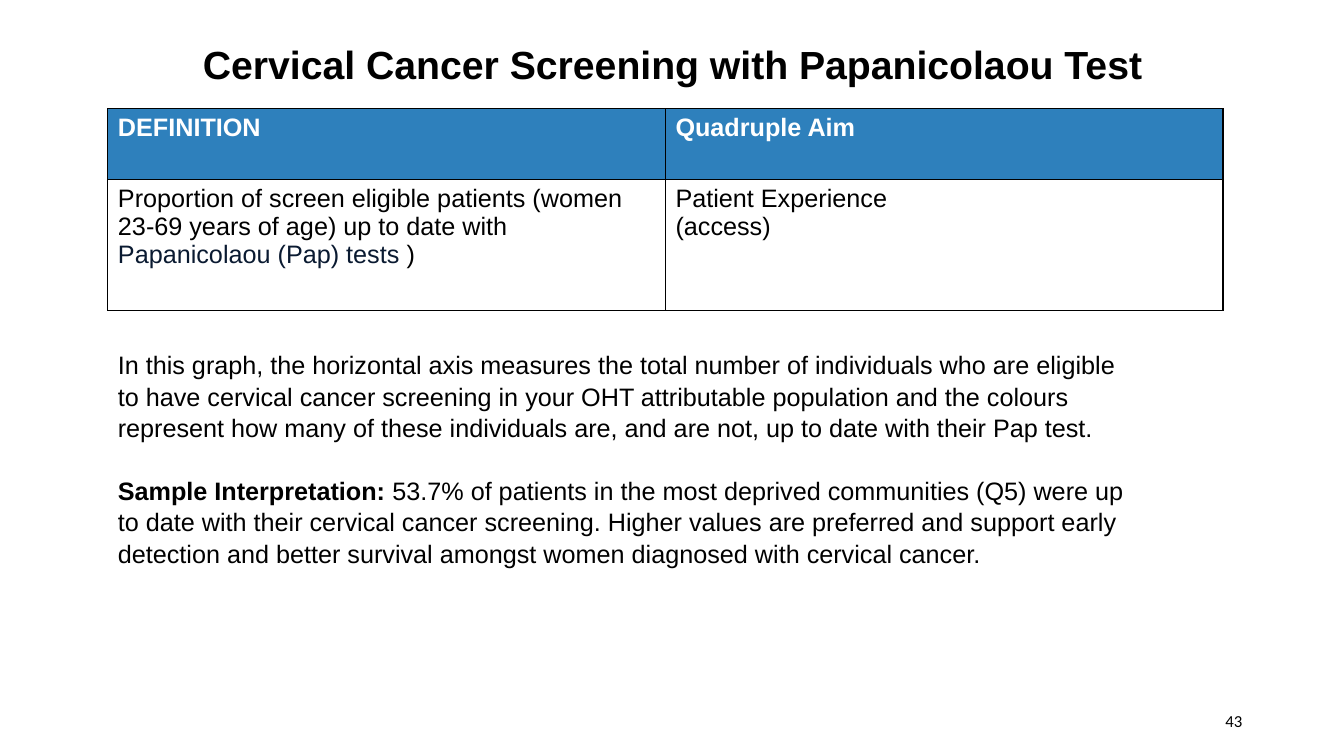
from lxml.etree import SubElement as Sub
from pptx import Presentation
from pptx.dml.color import RGBColor
from pptx.enum.text import MSO_ANCHOR as Anchor, MSO_AUTO_SIZE as Size, PP_ALIGN as Align
from pptx.oxml.ns import qn
from pptx.util import Pt

PX = 9144  # 100 px to the inch
BLACK, WHITE, BLUE, NAVY = "000000", "FFFFFF", "2E80BC", "0A1A31"

HEAD = ["DEFINITION", "Quadruple Aim"]
AIM = ["Patient Experience", "(access)"]
PROP = [
    ("Proportion of screen eligible patients (women 23-69 years of age) up to date with ",
     BLACK, False),
    ("Papanicolaou (Pap) tests ", NAVY, False),
    (")", BLACK, False),
]
GRAPH = [
    ("In this graph, the horizontal axis measures the total number of individuals who are "
     "eligible to have cervical cancer screening in your OHT attributable population and the "
     "colours represent how many of these individuals are, and are not, up to date with "
     "their Pap test.", BLACK, False),
]
SAMPLE = [
    ("Sample Interpretation: ", BLACK, True),
    ("53.7% of patients in the most deprived communities (Q5) were up to date with their "
     "cervical cancer screening. Higher values are preferred and support early detection and "
     "better survival amongst women diagnosed with cervical cancer.", BLACK, False),
]


def color(code):
    return RGBColor.from_string(code)


def style(run, size, tint=BLACK, bold=False, face="Arial"):
    font = run.font
    font.name, font.size, font.bold = face, Pt(size), bold
    font.color.rgb = color(tint)


def write(frame, paras, size=18):
    """Fill a text frame with paragraphs, each a list of (text, colour, bold)."""
    for i, parts in enumerate(paras):
        para = frame.add_paragraph() if i else frame.paragraphs[0]
        for text, tint, bold in parts:
            run = para.add_run()
            run.text = text
            style(run, size, tint, bold)


def border(cell):
    props = cell._tc.get_or_add_tcPr()
    for i, side in enumerate(("lnL", "lnR", "lnT", "lnB")):
        line = props.makeelement(qn("a:" + side), {"w": str(Pt(1))})
        fill = Sub(line, qn("a:solidFill"))
        Sub(fill, qn("a:srgbClr"), val=BLACK)
        props.insert(i, line)


def title(slide, x, y, w, h):
    box = slide.shapes.title
    box.left, box.top, box.width, box.height = (n * PX for n in (x, y, w, h))
    frame = box.text_frame
    frame.text = "Cervical Cancer Screening with Papanicolaou Test"
    frame.auto_size, frame.vertical_anchor = Size.NONE, Anchor.MIDDLE
    para = frame.paragraphs[0]
    para.alignment, para.line_spacing = Align.CENTER, 0.9
    style(para.runs[0], 28, bold=True)


def grid(slide, x, y, w, tall):
    """Definition table with two equal columns and the given row heights."""
    table = slide.shapes.add_table(
        2, 2, x * PX, y * PX, w * PX, sum(tall) * PX).table
    table.horz_banding = False
    for row, h in zip(table.rows, tall):
        row.height = h * PX
    rows = [
        [[[(text, WHITE, True)]] for text in HEAD],
        [[PROP], [[(text, BLACK, False)] for text in AIM]],
    ]
    for r, row in enumerate(rows):
        for c, paras in enumerate(row):
            cell = table.cell(r, c)
            write(cell.text_frame, paras)
            if r:
                cell.fill.background()
            else:
                cell.fill.solid()
                cell.fill.fore_color.rgb = color(BLUE)
            border(cell)


def notes(slide, x, y, w, h):
    """Explanation of the graph and its sample reading."""
    box = slide.shapes.add_textbox(x * PX, y * PX, w * PX, h * PX)
    frame = box.text_frame
    frame.word_wrap = True
    write(frame, [GRAPH, SAMPLE])
    for para in frame.paragraphs:
        para.line_spacing = 1.05
    frame.paragraphs[1].space_before = Pt(21.7)


def number(slide, x, y, w, h):
    box = slide.shapes.add_textbox(x * PX, y * PX, w * PX, h * PX)
    frame = box.text_frame
    frame.text = "43"
    frame.word_wrap, frame.vertical_anchor = True, Anchor.MIDDLE
    frame.paragraphs[0].alignment = Align.RIGHT
    style(frame.paragraphs[0].runs[0], 12, face="Calibri")


def main():
    deck = Presentation()
    deck.slide_width, deck.slide_height = 1333 * PX, 750 * PX
    slide = deck.slides.add_slide(deck.slide_layouts.get_by_name("Title Only"))
    title(slide, 77, 24, 1180, 84)
    grid(slide, 107, 108, 1106, (70, 130))
    notes(slide, 107, 340, 1032, 222)
    number(slide, 942, 695, 300, 40)
    deck.save("out.pptx")


if __name__ == "__main__":
    main()
